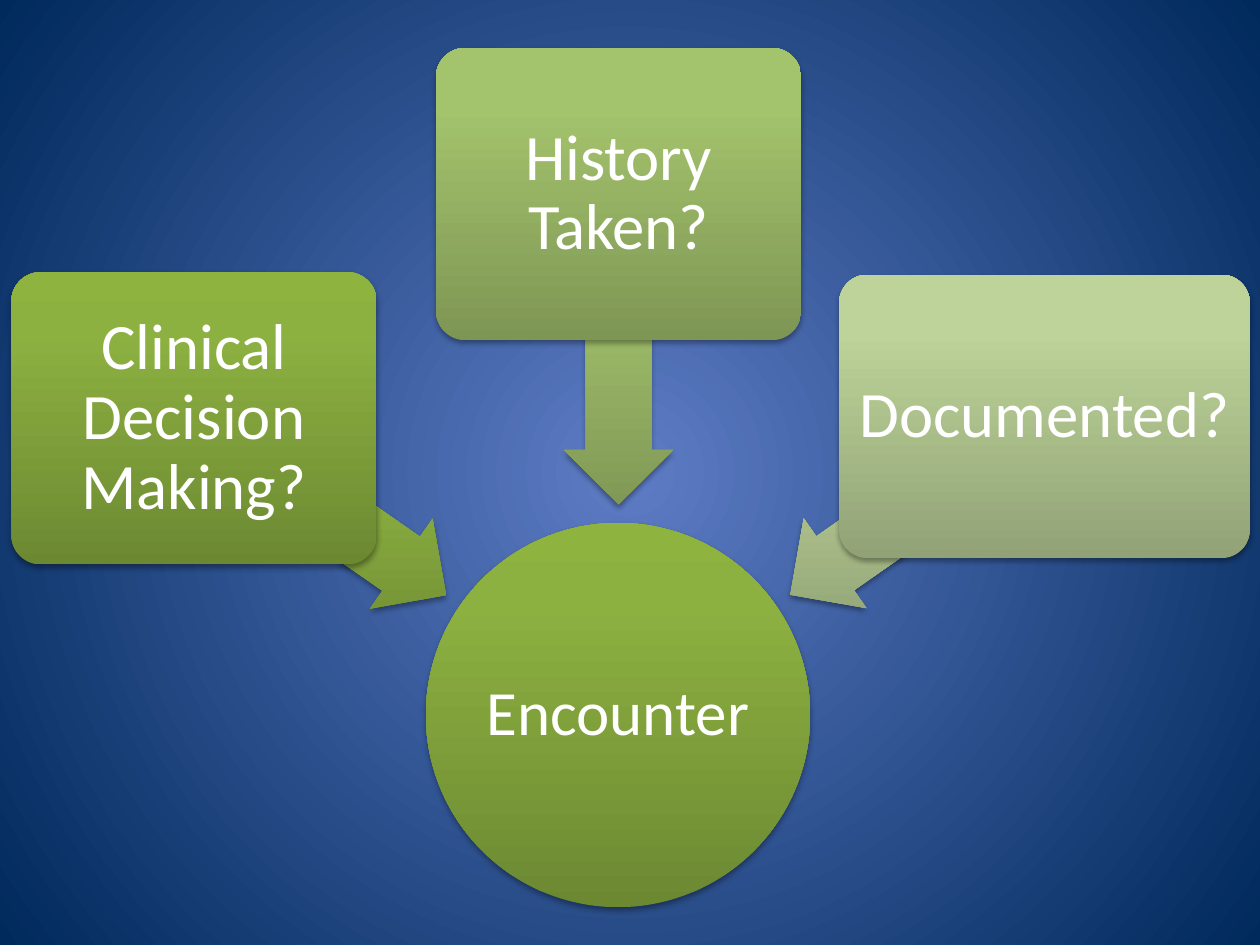
from dataclasses import dataclass

from lxml import etree
from pptx import Presentation
from pptx.dml.color import RGBColor
from pptx.enum.shapes import MSO_SHAPE
from pptx.enum.text import MSO_ANCHOR, PP_ALIGN
from pptx.oxml import parse_xml
from pptx.oxml.ns import nsdecls
from pptx.util import Inches, Pt

ELLIPSE = MSO_SHAPE.OVAL
ROUNDED = MSO_SHAPE.ROUNDED_RECTANGLE
ARROW = MSO_SHAPE.LEFT_ARROW
BLANK_LAYOUT = 6


@dataclass(frozen=True)
class Theme:
    font: str = "Calibri"
    text: str = "FFFFFF"
    hub_size: int = 36
    box_size: int = 37
    background: tuple = ((0, "5E7CC5"), (100, "00295C"))
    green: tuple = ((0, "6C8932"), (80, "8DB141"), (100, "8EB43F"))
    green_arrow: tuple = ((0, "729035"), (80, "94BB45"), (100, "96BE43"))
    soft: tuple = ((0, "7E9654"), (80, "A4C36D"), (100, "A5C56B"))
    soft_arrow: tuple = ((0, "819956"), (80, "A7C66F"), (100, "A8C96E"))
    pale: tuple = ((0, "91A276"), (80, "BDD399"), (100, "BED599"))
    pale_arrow: tuple = ((0, "91A275"), (80, "BCD398"), (100, "BDD598"))


THEME = Theme()
UPWARD = '<a:lin ang="16200000" scaled="0"/>'
FROM_CENTRE = ('<a:path path="circle"><a:fillToRect l="50000" t="50000" '
               'r="50000" b="50000"/></a:path>')
SHADOW = (f'<a:effectLst {nsdecls("a")}><a:outerShdw blurRad="40000" dist="23000" '
          'dir="5400000" rotWithShape="0"><a:srgbClr val="000000">'
          '<a:alpha val="35000"/></a:srgbClr></a:outerShdw></a:effectLst>')


def gradient_fill(stops, direction):
    gradient = parse_xml(f'<a:gradFill {nsdecls("a")} rotWithShape="0"><a:gsLst/>'
                         f'{direction}</a:gradFill>')
    for position, color in stops:
        stop = parse_xml(f'<a:gs {nsdecls("a")} pos="{position * 1000}">'
                         f'<a:srgbClr val="{color}"/></a:gs>')
        gradient[0].append(stop)
    return gradient


def add_shaded_shape(kind, place, stops, adjustments=(), text="", size=0, inset=0):
    """Add a borderless gradient shape with a soft shadow and optional centred text."""
    shape = slide.shapes.add_shape(kind, *(Inches(value) for value in place))
    for index, value in enumerate(adjustments):
        shape.adjustments[index] = value
    shape.line.fill.background()
    properties = shape._element.spPr
    properties.insert(2, gradient_fill(stops, UPWARD))
    properties.append(parse_xml(SHADOW))
    if text:
        frame = shape.text_frame
        frame.word_wrap = True
        frame.vertical_anchor = MSO_ANCHOR.MIDDLE
        frame.margin_left = frame.margin_right = Inches(inset)
        frame.margin_top = frame.margin_bottom = Inches(inset)
        frame.text = text
        paragraph = frame.paragraphs[0]
        paragraph.alignment = PP_ALIGN.CENTER
        paragraph.line_spacing = 0.9
        font = paragraph.runs[0].font
        font.name = THEME.font
        font.size = Pt(size)
        font.color.rgb = RGBColor.from_string(THEME.text)
    return shape


presentation = Presentation()
presentation.slide_width = Inches(10)
presentation.slide_height = Inches(7.5)
slide = presentation.slides.add_slide(presentation.slide_layouts[BLANK_LAYOUT])

# Background: bright centre fading to navy
slide.background.fill.solid()
background = slide._element.cSld.bg.bgPr
background.replace(background[0], gradient_fill(THEME.background, FROM_CENTRE))

# Hub
add_shaded_shape(ELLIPSE, (3.38, 4.15, 3.05, 3.05), THEME.green,
                 text="Encounter", size=THEME.hub_size, inset=0.03)

# Questions, each with an arrow behind it that points at the hub
questions = [
    ("Clinical Decision Making?", (0.09, 2.16, 2.9, 2.32), THEME.green,
     (1.32, 3.59, 2.44, 0.87), 214.9, THEME.green_arrow),
    ("History Taken?", (3.46, 0.38, 2.9, 2.32), THEME.soft,
     (3.68, 2.34, 2.46, 0.87), 270, THEME.soft_arrow),
    ("Documented?", (6.66, 2.18, 3.26, 2.25), THEME.pale,
     (6.05, 3.58, 2.46, 0.87), 325, THEME.pale_arrow),
]
for text, box_place, box_stops, arrow_place, rotation, arrow_stops in questions:
    arrow = add_shaded_shape(ARROW, arrow_place, arrow_stops, (0.6, 0.5))
    arrow.rotation = rotation
    add_shaded_shape(ROUNDED, box_place, box_stops, (0.1,),
                     text=text, size=THEME.box_size, inset=0.08)

presentation.save("out.pptx")
